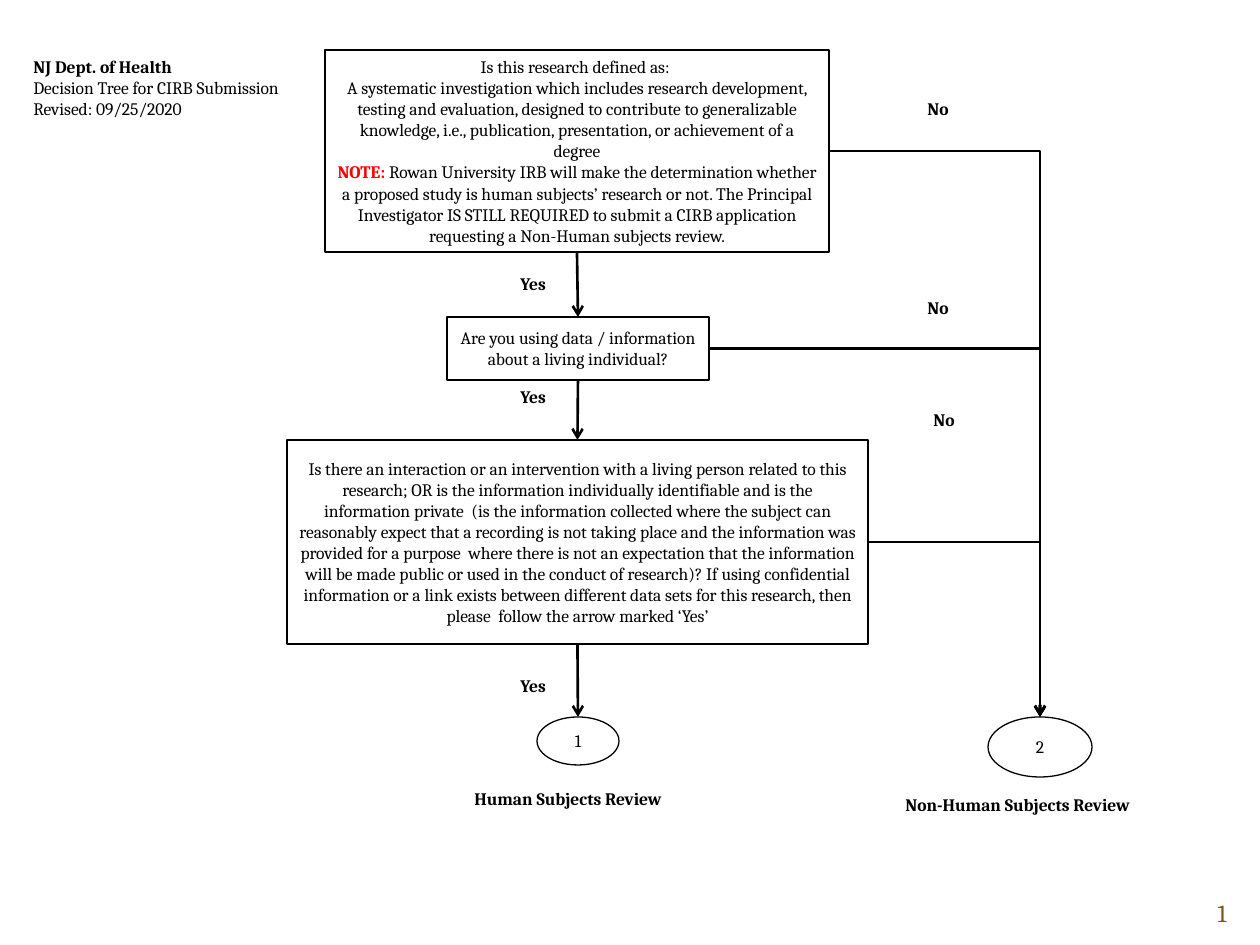
from lxml import etree
from pptx import Presentation
from pptx import util as u
from pptx.dml.color import RGBColor
from pptx.enum import shapes, text
from pptx.oxml import parse_xml
from pptx.oxml.ns import nsdecls, qn

PX = 914400 / 126
FONT = "Cambria"
BLACK = RGBColor(0x00, 0x00, 0x00)
RED = RGBColor(0xFF, 0x00, 0x00)
BROWN = RGBColor(0x7F, 0x51, 0x11)
PROCESS = shapes.MSO_SHAPE.FLOWCHART_PROCESS
CIRCLE = shapes.MSO_SHAPE.FLOWCHART_CONNECTOR
TOP, BOTTOM, RIGHT = 0, 2, 3

# Content: a paragraph is a list of (words, bold, colour) spans
NODES = {
    "research": (PROCESS, (325, 50, 504, 202), 1, [
        [("Is this research defined as: ", False, BLACK)],
        [("A systematic investigation which includes research development, "
          "testing and evaluation, designed to contribute to generalizable "
          "knowledge, i.e., publication, presentation, or achievement of a "
          "degree", False, BLACK)],
        [("NOTE:", True, RED),
         (" Rowan University IRB will make the determination whether a "
          "proposed study is human subjects’ research or not. The Principal "
          "Investigator IS STILL REQUIRED to submit a CIRB application "
          "requesting a Non-Human subjects review.", False, BLACK)],
    ]),
    "living": (PROCESS, (447, 317, 262, 63), 1, [
        [("Are you using data / information about a living individual?",
          False, BLACK)],
    ]),
    "interaction": (PROCESS, (287, 440, 581, 204), 1, [
        [("Is there an interaction or an intervention with a living person "
          "related to this research; OR is the information individually "
          "identifiable and is the information private  (is the information "
          "collected where the subject can reasonably expect that a recording "
          "is not taking place and the information was provided for a purpose "
          " where there is not an expectation that the information will be "
          "made public or used in the conduct of research)? If using "
          "confidential information or a link exists between different data "
          "sets for this research, then please  follow the arrow marked ‘Yes’",
          False, BLACK)],
    ]),
    "human": (CIRCLE, (537, 717, 82, 48), 0.75, [[("1", False, BLACK)]]),
    "non-human": (CIRCLE, (988, 717, 104, 60), 0.75, [[("2", False, BLACK)]]),
}
YES_PATH = ["research", "living", "interaction", "human"]
LABELS = [
    ("Yes", (508, 267, 59, 34)),
    ("Yes", (508, 380, 59, 34)),
    ("Yes", (508, 669, 59, 34)),
    ("No", (915, 92, 68, 34)),
    ("No", (915, 291, 68, 34)),
    ("No", (921, 403, 68, 34)),
    ("Human Subjects Review", (462, 782, 263, 34)),
    ("Non-Human Subjects Review", (893, 788, 294, 34)),
]
HEADER = [
    [("NJ Dept. of Health", True, BLACK)],
    [("Decision Tree for CIRB Submission", False, BLACK)],
    [("Revised: 09/25/2020", False, BLACK)],
]


def px(*lengths):
    return [u.Emu(round(length * PX)) for length in lengths]


def style(font, bold, colour, size=10):
    font.name, font.size, font.bold = FONT, u.Pt(size), bold
    font.color.rgb = colour


def write(frame, paragraphs, align=text.PP_ALIGN.LEFT):
    frame.word_wrap = True
    for i, spans in enumerate(paragraphs):
        para = frame.add_paragraph() if i else frame.paragraphs[0]
        para.alignment = align
        style(para.font, *spans[0][1:])
        for words, bold, colour in spans:
            span = para.add_run()
            span.text = words
            if len(spans) > 1:
                style(span.font, bold, colour)


def add_text(page, place, paragraphs):
    write(page.shapes.add_textbox(*px(*place)).text_frame, paragraphs)


def add_node(page, kind, place, weight, paragraphs):
    box = page.shapes.add_shape(kind, *px(*place))
    box.shadow.inherit = False
    box.fill.background()
    box.line.color.rgb = BLACK
    box.line.width = u.Pt(weight)
    box.text_frame.vertical_anchor = text.MSO_ANCHOR.MIDDLE
    write(box.text_frame, paragraphs, text.PP_ALIGN.CENTER)
    return box


def add_arrow(page, start, start_site, end, bent=False):
    kind = shapes.MSO_CONNECTOR.ELBOW if bent else shapes.MSO_CONNECTOR.STRAIGHT
    arrow = page.shapes.add_connector(kind, 0, 0, 0, 0)
    arrow.begin_connect(start, start_site)
    arrow.end_connect(end, TOP)
    arrow.line.color.rgb = BLACK
    arrow.line.width = u.Pt(1.5)
    properties = arrow._element.spPr
    if bent:  # a single corner
        properties.find(qn("a:prstGeom")).set("prst", "bentConnector2")
    etree.SubElement(properties.find(qn("a:ln")), qn("a:tailEnd"), type="arrow")
    etree.SubElement(properties, qn("a:effectLst"))


def add_page_number(page, place):
    frame = page.shapes.add_textbox(*px(*place)).text_frame
    para = frame.paragraphs[0]
    para.alignment = text.PP_ALIGN.RIGHT
    para._p.append(parse_xml(
        f'<a:fld {nsdecls("a")} id="{{B6F15528-21DE-4FAA-801E-634DDDAF4B2B}}" '
        f'type="slidenum"><a:rPr lang="en-US" sz="1400"><a:solidFill>'
        f'<a:srgbClr val="{BROWN}"/></a:solidFill><a:latin typeface="{FONT}"/>'
        f'</a:rPr><a:t>1</a:t></a:fld>'))


def main():
    deck = Presentation()
    deck.slide_width, deck.slide_height = px(1260, 945)
    page = deck.slides.add_slide(deck.slide_layouts[6])

    # Heading and page number
    add_text(page, (21, 50, 305, 77), HEADER)
    add_page_number(page, (1176, 892, 63, 42))

    # Questions and outcomes
    boxes = {name: add_node(page, *node) for name, node in NODES.items()}

    # Yes goes down to the next step, No goes right to the non-human review
    for name, following in zip(YES_PATH, YES_PATH[1:]):
        add_arrow(page, boxes[name], BOTTOM, boxes[following])
        add_arrow(page, boxes[name], RIGHT, boxes["non-human"], bent=True)

    # Labels
    for words, place in LABELS:
        add_text(page, place, [[(words, True, BLACK)]])

    deck.save("out.pptx")


if __name__ == "__main__":
    main()
